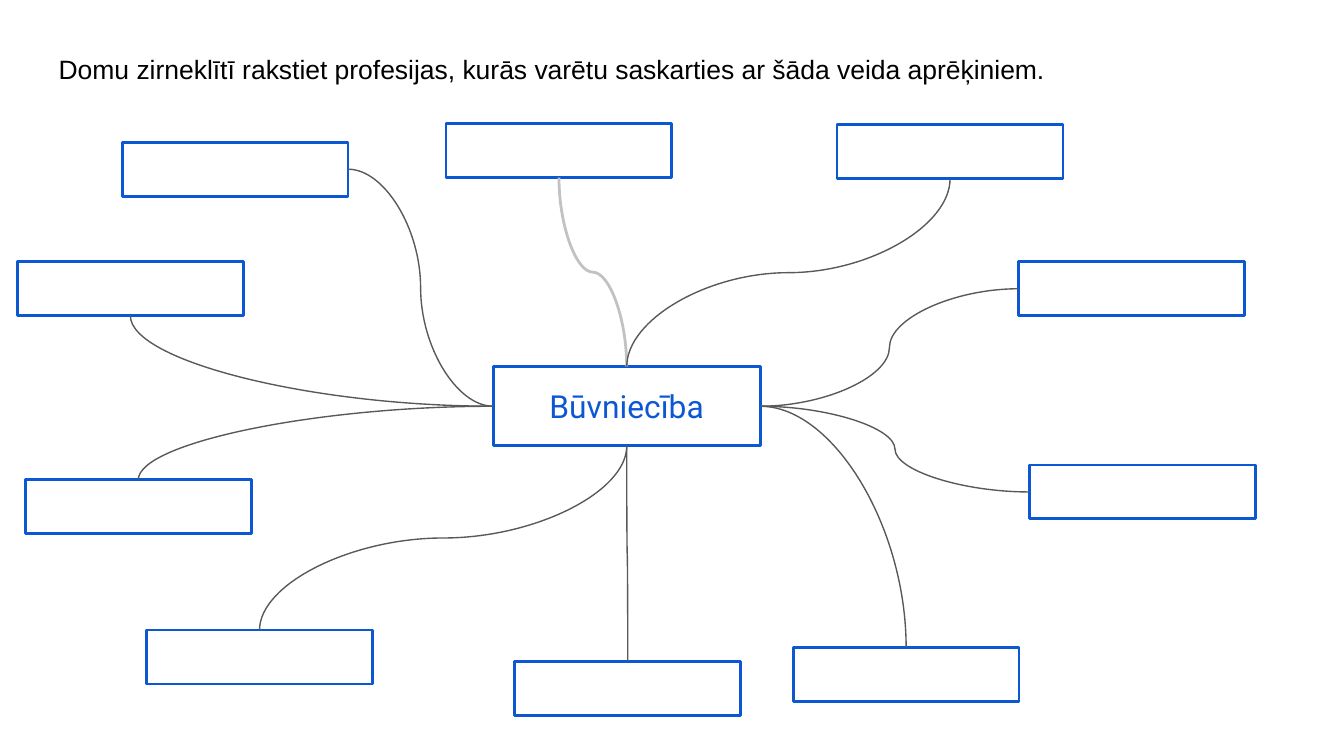
"""Build a mind map slide about professions linked to construction."""
from lxml import etree
from pptx import Presentation
from pptx.dml.color import RGBColor
from pptx.enum.shapes import MSO_CONNECTOR, MSO_SHAPE
from pptx.enum.text import MSO_ANCHOR, PP_ALIGN
from pptx.oxml.ns import qn
from pptx.util import Cm, Pt

CURVE = MSO_CONNECTOR.CURVE
RECT = MSO_SHAPE.RECTANGLE
MIDDLE = MSO_ANCHOR.MIDDLE
CENTER = PP_ALIGN.CENTER
TOP, LEFT, BOTTOM, RIGHT = range(4)

COLORS = {"blue": "0C58D3", "gray": "595959", "pale": "C2C2C2", "black": "000000"}
TITLE = "Domu zirneklītī rakstiet profesijas, kurās varētu saskarties ar šāda veida aprēķiniem."
HUB = (9.32, 6.93, 5.05, 1.5)
LEAF = (4.27, 1.02)
LEAVES = [
    (8.43, 2.34, TOP, BOTTOM, "pale", 1.5),
    (15.82, 2.36, TOP, BOTTOM, "gray", 0.75),
    (19.25, 4.95, RIGHT, LEFT, "gray", 0.75),
    (19.46, 8.79, RIGHT, LEFT, "gray", 0.75),
    (14.99, 12.24, RIGHT, TOP, "gray", 0.75),
    (9.73, 12.5, BOTTOM, TOP, "gray", 0.75),
    (2.77, 11.91, BOTTOM, TOP, "gray", 0.75),
    (0.48, 9.07, LEFT, TOP, "gray", 0.75),
    (0.33, 4.95, LEFT, BOTTOM, "gray", 0.75),
    (2.31, 2.69, LEFT, RIGHT, "gray", 0.75),
]


def color(name):
    """Return the named colour."""
    return RGBColor.from_string(COLORS[name])


def write(shape, text, font, size, tint):
    """Put one styled line of text into a shape."""
    frame = shape.text_frame
    frame.word_wrap = True
    frame.margin_left = frame.margin_right = Cm(0.25)
    frame.margin_top = frame.margin_bottom = Cm(0.25)
    para = frame.paragraphs[0]
    para.text = text
    run = para.runs[0]
    run.font.name = font
    run.font.size = Pt(size)
    run.font.color.rgb = color(tint)
    return frame


def add_title(slide):
    """Add the task line at the top."""
    box = slide.shapes.add_textbox(Cm(0.86), Cm(0.76), Cm(23.67), Cm(1.6))
    write(box, TITLE, "Arial", 14.2, "black")


def add_box(slide, x, y, width, height):
    """Add an outlined rectangle."""
    box = slide.shapes.add_shape(RECT, Cm(x), Cm(y), Cm(width), Cm(height))
    box.shadow.inherit = False
    box.fill.background()
    box.line.color.rgb = color("blue")
    box.line.width = Pt(1.5)
    return box


def add_hub(slide):
    """Add the central topic."""
    hub = add_box(slide, *HUB)
    frame = write(hub, "Būvniecība", "Roboto", 17, "blue")
    frame.vertical_anchor = MIDDLE
    frame.paragraphs[0].alignment = CENTER
    return hub


def turn(line):
    """Make a downward curve leave and arrive vertically."""
    wide = line.end_x - line.begin_x
    tall = line.end_y - line.begin_y
    mid_x = (line.begin_x + line.end_x) // 2
    mid_y = (line.begin_y + line.end_y) // 2
    line.left, line.top = mid_x - tall // 2, mid_y - abs(wide) // 2
    line.width, line.height = tall, abs(wide)
    frame = line._element.spPr.find(qn("a:xfrm"))
    frame.attrib.pop("flipH", None)
    frame.set("rot", "5400000")
    frame.set("flipV", "1" if wide > 0 else "0")


def add_curve(slide, hub, leaf, start, end, tint, width):
    """Join the hub and a leaf with a curve."""
    ends = [(hub, start), (leaf, end)]
    if start == TOP:
        ends.reverse()
    line = slide.shapes.add_connector(CURVE, 0, 0, 0, 0)
    line.begin_connect(*ends[0])
    line.end_connect(*ends[1])
    line.line.color.rgb = color(tint)
    line.line.width = Pt(width)
    props = line._element.spPr
    etree.SubElement(props, qn("a:effectLst"))
    if start in (TOP, BOTTOM):
        turn(line)
    elif end in (TOP, BOTTOM):
        props.find(qn("a:prstGeom")).set("prst", "curvedConnector2")


def main():
    """Build and save the slide."""
    deck = Presentation()
    deck.slide_width, deck.slide_height = Cm(25.4), Cm(14.29)
    slide = deck.slides.add_slide(deck.slide_layouts[6])
    add_title(slide)
    hub = add_hub(slide)
    for x, y, *link in LEAVES:
        leaf = add_box(slide, x, y, *LEAF)
        add_curve(slide, hub, leaf, *link)
    deck.save("out.pptx")


if __name__ == "__main__":
    main()
